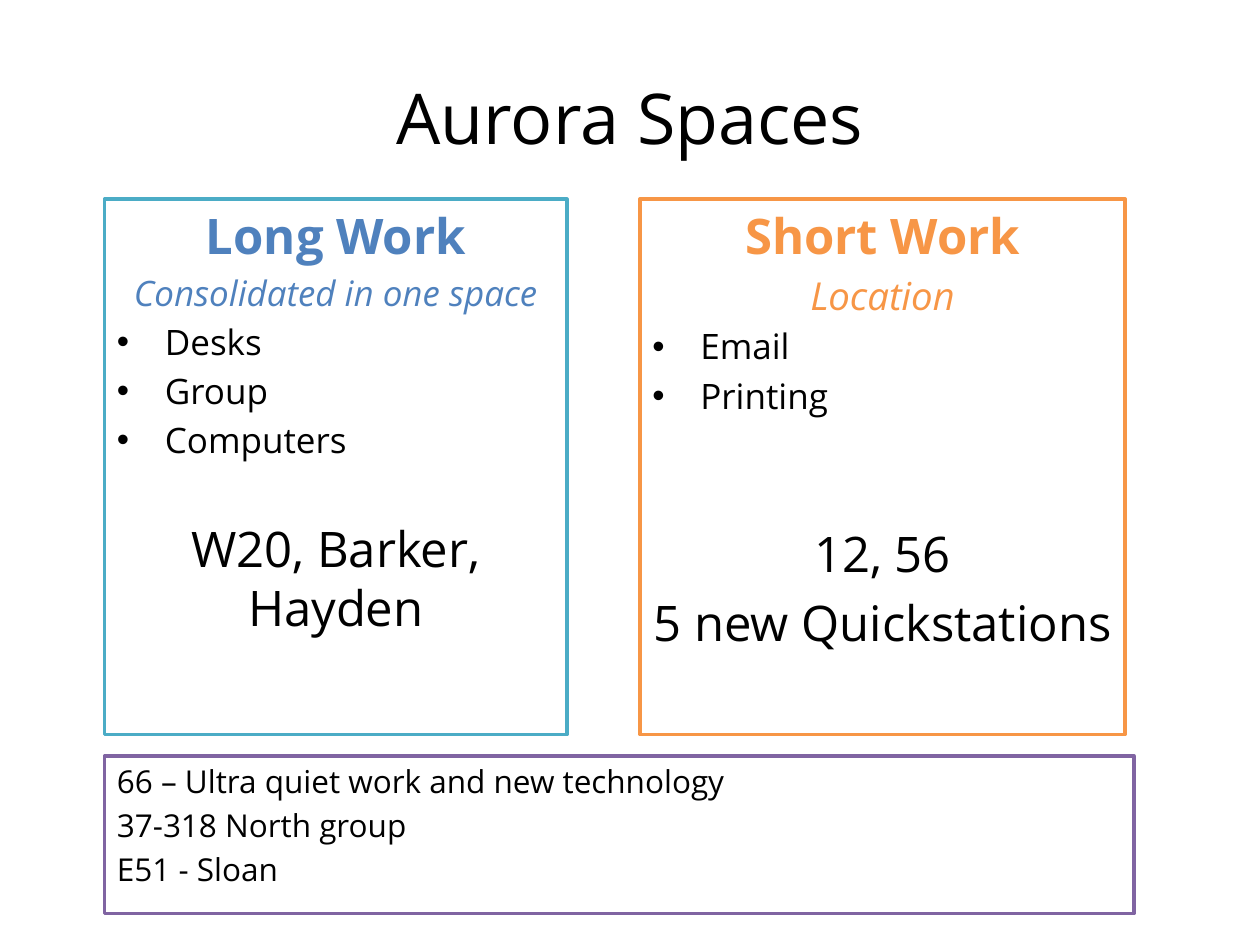
from lxml.etree import SubElement
from pptx import Presentation
from pptx.dml.color import RGBColor
from pptx.enum.shapes import MSO_SHAPE
from pptx.enum.text import MSO_ANCHOR, PP_ALIGN
from pptx.oxml.ns import qn
from pptx.util import Inches, Pt

THEME = {
    "font": "Open Sans", "black": "000000", "white": "FFFFFF", "blue": "4F81BD",
    "teal": "4BACC6", "orange": "F79646", "purple": "8064A2",
    "title": 40, "heading": 28, "location": 22, "body": 20, "note": 18,
    "border": 2, "spacing": 0.2, "blank_line": 28, "indent": 0.38,
}
STYLES = {
    "title": {"size": "title", "align": PP_ALIGN.CENTER, "spacing": 0},
    "heading": {"size": "heading", "align": PP_ALIGN.CENTER, "bold": True, "accent": True},
    "subtitle": {"size": "body", "align": PP_ALIGN.CENTER, "italic": True, "accent": True},
    "location": {"size": "location", "align": PP_ALIGN.CENTER, "italic": True, "accent": True},
    "bullet": {"size": "body", "bullet": True},
    "place": {"size": "heading", "align": PP_ALIGN.CENTER},
    "note": {"size": "note"},
}
TITLE = {"box": (0.5, 0.3, 9, 1.25), "lines": [("title", "Aurora Spaces", 0)]}
PANELS = [
    {"box": (0.83, 1.58, 3.67, 4.25), "border": "teal", "accent": "blue", "lines": [
        ("heading", "Long Work", 0),
        ("subtitle", "Consolidated in one space", 0),
        ("bullet", "Desks", 0),
        ("bullet", "Group", 0),
        ("bullet", "Computers", 0),
        ("place", "W20, Barker, Hayden", 1),
    ]},
    {"box": (5.08, 1.58, 3.85, 4.25), "border": "orange", "accent": "orange", "lines": [
        ("heading", "Short Work", 0),
        ("location", "Location", 0),
        ("bullet", "Email", 0),
        ("bullet", "Printing", 0),
        ("place", "12, 56", 2),
        ("place", "5 new Quickstations", 0),
    ]},
    {"box": (0.83, 6, 8.17, 1.25), "border": "purple", "accent": "black", "lines": [
        ("note", "66 – Ultra quiet work and new technology", 0),
        ("note", "37-318 North group", 0),
        ("note", "E51 - Sloan", 0),
    ]},
]


def color(name):
    return RGBColor.from_string(THEME[name])


def set_values(target, values):
    for name, value in values.items():
        setattr(target, name, value)


def add_bullet(paragraph):
    properties = paragraph._p.get_or_add_pPr()
    properties.set("marL", str(Inches(THEME["indent"])))
    properties.set("indent", str(-Inches(THEME["indent"])))
    SubElement(properties, qn("a:buFont"), typeface="Arial")
    SubElement(properties, qn("a:buChar"), char="•")


def write_lines(shape, lines, accent, anchor):
    frame = shape.text_frame
    set_values(frame, {"word_wrap": True, "vertical_anchor": anchor})
    for index, (style_name, text, gap_lines) in enumerate(lines):
        style = STYLES[style_name]
        size = THEME[style["size"]]
        paragraph = frame.add_paragraph() if index else frame.paragraphs[0]
        spacing = size * style.get("spacing", THEME["spacing"])
        set_values(paragraph, {
            "alignment": style.get("align", PP_ALIGN.LEFT),
            "space_before": Pt(spacing + gap_lines * THEME["blank_line"]),
        })
        if style.get("bullet"):
            add_bullet(paragraph)
        run = paragraph.add_run()
        run.text = text
        set_values(run.font, {
            "name": THEME["font"], "size": Pt(size),
            "bold": style.get("bold", False), "italic": style.get("italic", False),
        })
        run.font.color.rgb = color(accent if style.get("accent") else "black")


def add_panel(slide, panel):
    shape = slide.shapes.add_shape(MSO_SHAPE.RECTANGLE, *map(Inches, panel["box"]))
    shape.shadow.inherit = False
    shape.fill.solid()
    shape.fill.fore_color.rgb = color("white")
    shape.line.color.rgb = color(panel["border"])
    shape.line.width = Pt(THEME["border"])
    write_lines(shape, panel["lines"], panel["accent"], MSO_ANCHOR.TOP)


def main():
    """Build the slide comparing long and short work spaces."""
    presentation = Presentation()
    set_values(presentation, {"slide_width": Inches(10), "slide_height": Inches(7.5)})
    slide = presentation.slides.add_slide(presentation.slide_layouts[6])
    title = slide.shapes.add_textbox(*map(Inches, TITLE["box"]))
    write_lines(title, TITLE["lines"], "black", MSO_ANCHOR.MIDDLE)
    for panel in PANELS:
        add_panel(slide, panel)
    presentation.save("out.pptx")


if __name__ == "__main__":
    main()
